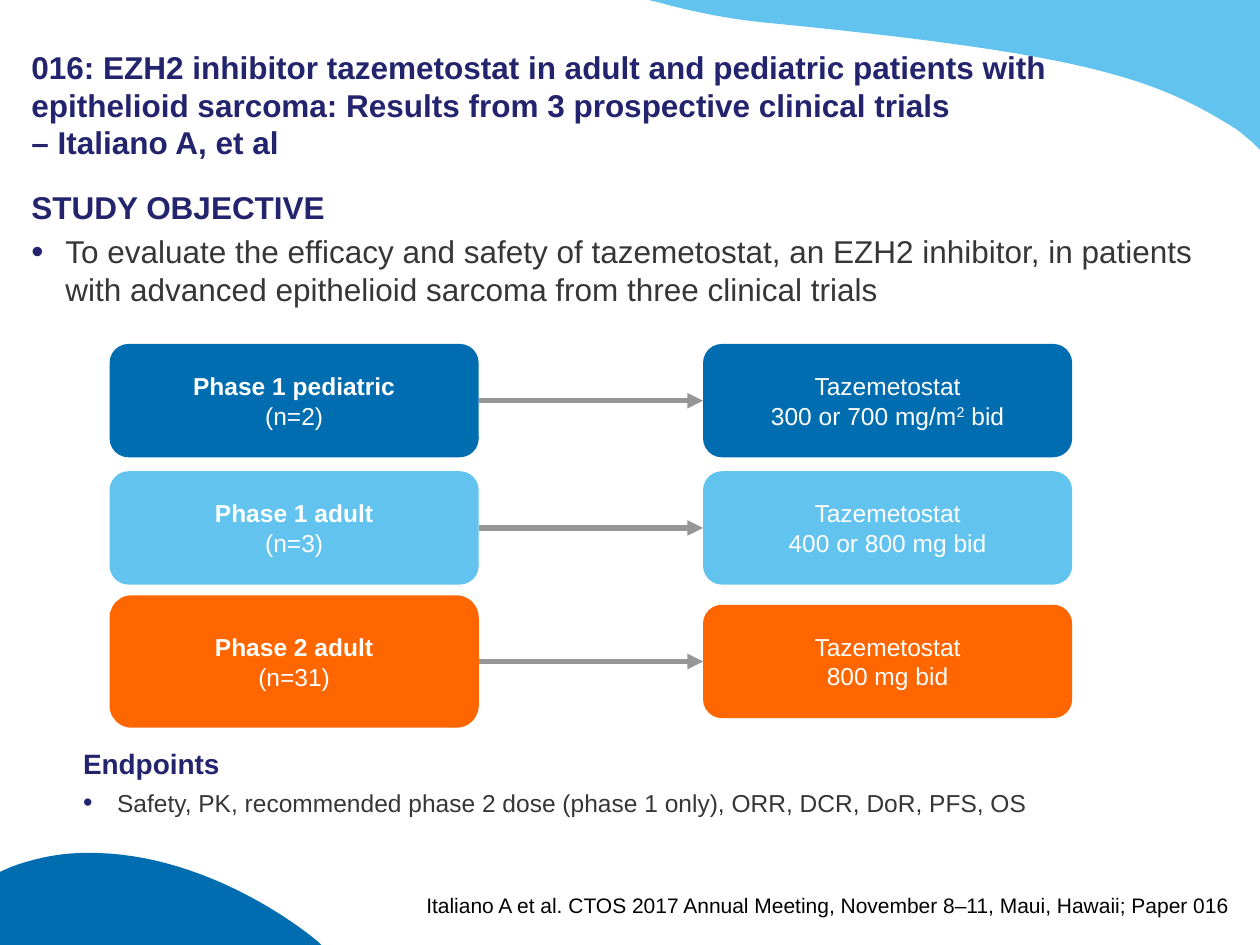
from dataclasses import dataclass

import pptx
import pptx.dml.color
import pptx.enum.shapes
import pptx.enum.text
import pptx.oxml
import pptx.oxml.ns
import pptx.util
from pptx.util import Inches

COLORS = {
    "navy": "23246D",
    "blue": "006DB0",
    "sky": "62C4EE",
    "orange": "FF6600",
    "gray": "969696",
    "body": "363636",
    "white": "FFFFFF",
    "black": "000000",
}
ALIGN = pptx.enum.text.PP_ALIGN
ANCHOR = pptx.enum.text.MSO_ANCHOR
MSO_SHAPE = pptx.enum.shapes.MSO_SHAPE

BOX_W, BOX_H = 2.93, 0.9
COHORT_X, DOSE_X = 0.87, 5.58
CURVE_STEPS = 24


@dataclass
class Arm:
    """One trial arm: its cohort box, arrow and dose box."""
    color: str
    mid_y: float
    cohort: str
    count: str
    dose: list[tuple[str, bool]]  # text, superscript
    cohort_h: float = BOX_H


ARMS = [
    Arm("blue", 3.18, "Phase 1 pediatric", "(n=2)",
        [("Tazemetostat\n300 or 700 mg/m", False), ("2", True), (" bid", False)]),
    Arm("sky", 4.19, "Phase 1 adult", "(n=3)",
        [("Tazemetostat\n400 or 800 mg bid", False)]),
    Arm("orange", 5.25, "Phase 2 adult", "(n=31)",
        [("Tazemetostat\n800 mg bid", False)], cohort_h=1.05),
]


def rgb(name: str) -> pptx.dml.color.RGBColor:
    return pptx.dml.color.RGBColor.from_string(COLORS[name])


def add_text(p, text: str, *, size: float, color: str, bold: bool = False,
             superscript: bool = False) -> None:
    """Append text to a paragraph; a newline becomes a line break."""
    for i, line in enumerate(text.split("\n")):
        if i:
            p.add_line_break()
        if not line:
            continue
        r = p.add_run()
        r.text = line
        r.font.name = "Arial"
        r.font.size = pptx.util.Pt(size)
        r.font.bold = bold
        r.font.color.rgb = rgb(color)
        if superscript:
            r.font._element.set("baseline", "30000")


def set_frame(tf, anchor, side: float = 0, top: float = 0, bottom: float = 0,
              wrap: bool = True) -> None:
    tf.word_wrap = wrap
    tf.vertical_anchor = anchor
    tf.margin_left = tf.margin_right = Inches(side)
    tf.margin_top, tf.margin_bottom = Inches(top), Inches(bottom)


def add_frame(s, x: float, y: float, w: float, h: float, anchor=ANCHOR.TOP, **margins):
    tf = s.shapes.add_textbox(Inches(x), Inches(y), Inches(w), Inches(h)).text_frame
    set_frame(tf, anchor, **margins)
    return tf


def set_bullet(p) -> None:
    pPr = p._p.get_or_add_pPr()
    pPr.set("marL", str(Inches(0.27)))
    pPr.set("indent", str(Inches(-0.27)))
    ns = pptx.oxml.ns.nsdecls("a")
    for xml in (f'<a:buClr {ns}><a:srgbClr val="{COLORS["navy"]}"/></a:buClr>',
                f'<a:buSzPct {ns} val="110000"/>',
                f'<a:buFont {ns} typeface="Arial"/>',
                f'<a:buChar {ns} char="•"/>'):
        pPr.append(pptx.oxml.parse_xml(xml))


def add_section(s, x: float, y: float, w: float, h: float, heading: str,
                bullet: str, heading_size: float, bullet_size: float) -> None:
    """A bold heading with one bullet below it."""
    tf = add_frame(s, x, y, w, h, top=0.05, bottom=0.05)
    p = tf.paragraphs[0]
    add_text(p, heading, size=heading_size, color="navy", bold=True)
    p.space_after = pptx.util.Pt(4)
    p = tf.add_paragraph()
    add_text(p, bullet, size=bullet_size, color="body")
    p.space_after = pptx.util.Pt(4)
    set_bullet(p)


def paint(sp, color: str) -> None:
    sp.fill.solid()
    sp.fill.fore_color.rgb = rgb(color)
    sp.line.fill.background()
    sp.shadow.inherit = False


def add_swoosh(s, color: str, start: tuple, segments: list[tuple]) -> None:
    """Closed outline; a 2-value segment is a line, a 6-value one a Bézier curve."""
    points = [start]
    for seg in segments:
        if len(seg) == 2:
            points.append(seg)
            continue
        a, b, c, d = points[-1], seg[:2], seg[2:4], seg[4:]
        for i in range(1, CURVE_STEPS + 1):
            t = i / CURVE_STEPS
            u = 1 - t
            points.append(tuple(
                u**3 * a[k] + 3 * u * u * t * b[k] + 3 * u * t * t * c[k] + t**3 * d[k]
                for k in (0, 1)))
    emu = [(Inches(x), Inches(y)) for x, y in points]
    builder = s.shapes.build_freeform(*emu[0])
    builder.add_line_segments(emu[1:], close=True)
    paint(builder.convert_to_shape(), color)


def add_box(s, x: float, mid_y: float, h: float, color: str):
    sp = s.shapes.add_shape(MSO_SHAPE.ROUNDED_RECTANGLE, Inches(x),
                            Inches(mid_y - h / 2), Inches(BOX_W), Inches(h))
    paint(sp, color)
    set_frame(sp.text_frame, ANCHOR.MIDDLE, side=0.1)
    sp.text_frame.paragraphs[0].alignment = ALIGN.CENTER
    return sp


def add_arrow(s, left, right) -> None:
    cxn = s.shapes.add_connector(pptx.enum.shapes.MSO_CONNECTOR.STRAIGHT, 0, 0, 0, 0)
    cxn.begin_connect(left, 3)
    cxn.end_connect(right, 1)
    cxn.line.color.rgb = rgb("gray")
    cxn.line.width = pptx.util.Pt(3)
    ns = pptx.oxml.ns.nsdecls("a")
    cxn.line._get_or_add_ln().append(
        pptx.oxml.parse_xml(f'<a:tailEnd {ns} type="triangle"/>'))
    cxn._element.spPr.append(pptx.oxml.parse_xml(f"<a:effectLst {ns}/>"))


def add_arm(s, arm: Arm) -> None:
    cohort = add_box(s, COHORT_X, arm.mid_y, arm.cohort_h, arm.color)
    p = cohort.text_frame.paragraphs[0]
    add_text(p, arm.cohort, size=14, color="white", bold=True)
    add_text(p, "\n" + arm.count, size=14, color="white")
    dose = add_box(s, DOSE_X, arm.mid_y, BOX_H, arm.color)
    for text, superscript in arm.dose:
        add_text(dose.text_frame.paragraphs[0], text, size=14, color="white",
                 superscript=superscript)
    add_arrow(s, cohort, dose)


def main() -> None:
    prs = pptx.Presentation()
    prs.slide_width, prs.slide_height = Inches(10), Inches(7.5)
    s = prs.slides.add_slide(prs.slide_layouts[6])

    # Corner decoration
    add_swoosh(s, "sky", (5.15, 0), [
        (10, 0), (10, 1.19), (9.93, 1.12), (9.89, 1.09, 9.86, 1.06, 9.82, 1.03),
        (9.17, 0.62, 8.64, 0.43, 6.08, 0.18), (5.77, 0.15, 5.49, 0.09, 5.23, 0.02)])
    add_swoosh(s, "blue", (0.67, 6.77), [
        (1.45, 6.75, 2.18, 7.19, 2.52, 7.47), (2.55, 7.5), (0, 7.5), (0, 6.92),
        (0.09, 6.88), (0.28, 6.81, 0.48, 6.77, 0.67, 6.77)])

    # Title
    tf = add_frame(s, 0.25, 0.25, 8.37, 1.03, ANCHOR.BOTTOM, top=0.05)
    add_text(tf.paragraphs[0],
             "016: EZH2 inhibitor tazemetostat in adult and pediatric patients with "
             "epithelioid sarcoma: Results from 3 prospective clinical trials\n"
             "– Italiano A, et al", size=18, color="navy", bold=True)

    # Objective, trial arms, endpoints
    add_section(s, 0.25, 1.44, 9.5, 1.2, "STUDY OBJECTIVE",
                "To evaluate the efficacy and safety of tazemetostat, an EZH2 inhibitor, "
                "in patients with advanced epithelioid sarcoma from three clinical trials",
                18, 18)
    for arm in ARMS:
        add_arm(s, arm)
    add_section(s, 0.66, 5.88, 7.73, 1.06, "Endpoints",
                "Safety, PK, recommended phase 2 dose (phase 1 only), "
                "ORR, DCR, DoR, PFS, OS", 16, 14)

    # Citation
    tf = add_frame(s, 3.34, 7.08, 6.42, 0.2, ANCHOR.BOTTOM, wrap=False)
    p = tf.paragraphs[0]
    p.alignment = ALIGN.RIGHT
    add_text(p, "Italiano A et al. CTOS 2017 Annual Meeting, November 8–11, "
                "Maui, Hawaii; Paper 016", size=12, color="black")

    prs.save("out.pptx")


if __name__ == "__main__":
    main()
